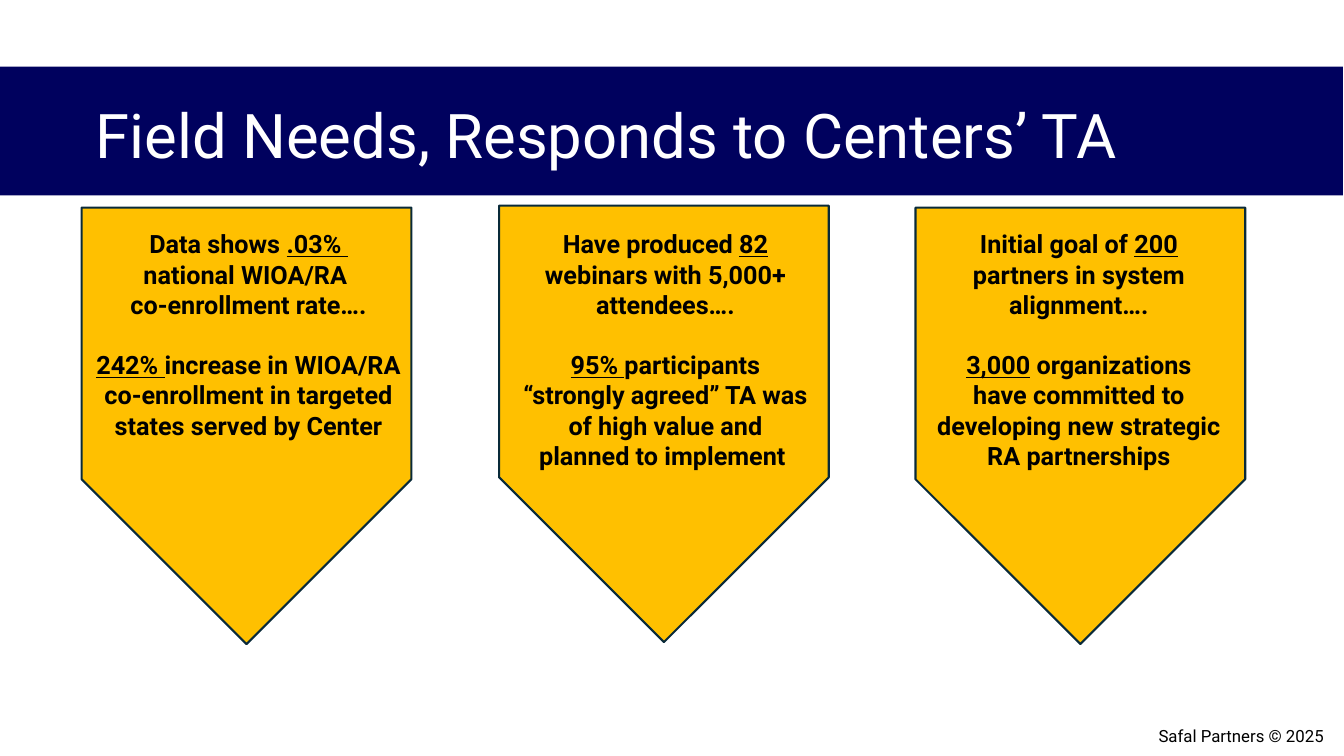
"""Build the slide on field needs and the Centers' technical assistance."""
from pptx import Presentation
from pptx.dml.color import RGBColor
from pptx.enum.shapes import MSO_SHAPE as Shape
from pptx.enum.text import MSO_ANCHOR as Anchor, PP_ALIGN as Align
from pptx.util import Inches, Pt


def color(hex_code):
    return RGBColor.from_string(hex_code)


def style(run, size, hex_code):
    run.font.name = "Roboto"
    run.font.size = Pt(size)
    run.font.color.rgb = color(hex_code)


prs = Presentation()
prs.slide_width, prs.slide_height = Inches(13.33), Inches(7.5)
slide = prs.slides.add_slide(prs.slide_layouts[5])

banner = slide.shapes.add_shape(
    Shape.RECTANGLE, 0, Inches(0.66), Inches(13.32), Inches(1.28))
banner.shadow.inherit = False
banner.fill.solid()
banner.fill.fore_color.rgb = color("00015E")
banner.line.fill.background()
slide.shapes._spTree.insert(2, banner._element)

title = slide.shapes.title
title.left, title.top = Inches(0.85), Inches(0.91)
title.width, title.height = Inches(11.5), Inches(0.92)
title.text_frame.text = "Field Needs, Responds to Centers’ TA"
title.text_frame.vertical_anchor = Anchor.MIDDLE
heading = title.text_frame.paragraphs[0]
heading.alignment = Align.LEFT
heading.line_spacing = 0.9
style(heading.runs[0], 44, "FFFFFF")

# Each statement: gap before it, then (text, underlined) parts; \v breaks the line.
GAP = 21.5
results = [
    (0.28, 2.59, 0.85, 3.23, 2.5, [
        (0, [("Data shows ", False), (".03% \v", True), ("national WIOA/RA ", False)]),
        (0, [("co-enrollment rate….", False)]),
        (GAP, [("242% ", True), ("increase in WIOA/RA ", False)]),
        (0, [("co-enrollment in targeted states served by Center", False)]),
    ]),
    (4.42, 2.57, 5.09, 3.02, 4.57, [
        (0, [("Have produced ", False), ("82", True),
             (" webinars with 5,000+ attendees….", False)]),
        (GAP, [("95% ", True),
               ("participants “strongly agreed” TA was of high value and "
                "planned to implement ", False)]),
    ]),
    (8.55, 2.59, 9.19, 3.02, 4.57, [
        (0, [("Initial goal of ", False), ("200 ", True),
             ("partners in system alignment….", False)]),
        (GAP, [("3,000", True),
               (" organizations have committed to developing new strategic "
                "RA partnerships", False)]),
    ]),
]

for arrow_left, arrow_top, left, width, height, statements in results:
    arrow = slide.shapes.add_shape(
        Shape.PENTAGON, Inches(arrow_left), Inches(arrow_top), Inches(4.33), Inches(3.27))
    arrow.rotation = 90
    arrow.shadow.inherit = False
    arrow.fill.solid()
    arrow.fill.fore_color.rgb = color("FFC000")
    arrow.line.color.rgb = color("092A39")
    arrow.line.width = Pt(1.5)

    message = slide.shapes.add_textbox(
        Inches(left), Inches(2.22), Inches(width), Inches(height)).text_frame
    message.word_wrap = True
    for index, (gap, parts) in enumerate(statements):
        statement = message.add_paragraph() if index else message.paragraphs[0]
        statement.alignment = Align.CENTER
        if gap:
            statement.space_before = Pt(gap)
        for text, underlined in parts:
            run = statement.add_run()
            run.text = text.rstrip("\v")
            style(run, 18, "000000")
            run.font.bold = True
            run.font.underline = underlined
            if text.endswith("\v"):
                statement.add_line_break()

footer = slide.shapes.add_textbox(
    Inches(9.6), Inches(7.1), Inches(3.63), Inches(0.4)).text_frame
footer.word_wrap = True
footer.vertical_anchor = Anchor.MIDDLE
footer.text = "Safal Partners © 2025"
footer.paragraphs[0].alignment = Align.RIGHT
style(footer.paragraphs[0].runs[0], 12, "000000")

prs.save("out.pptx")
